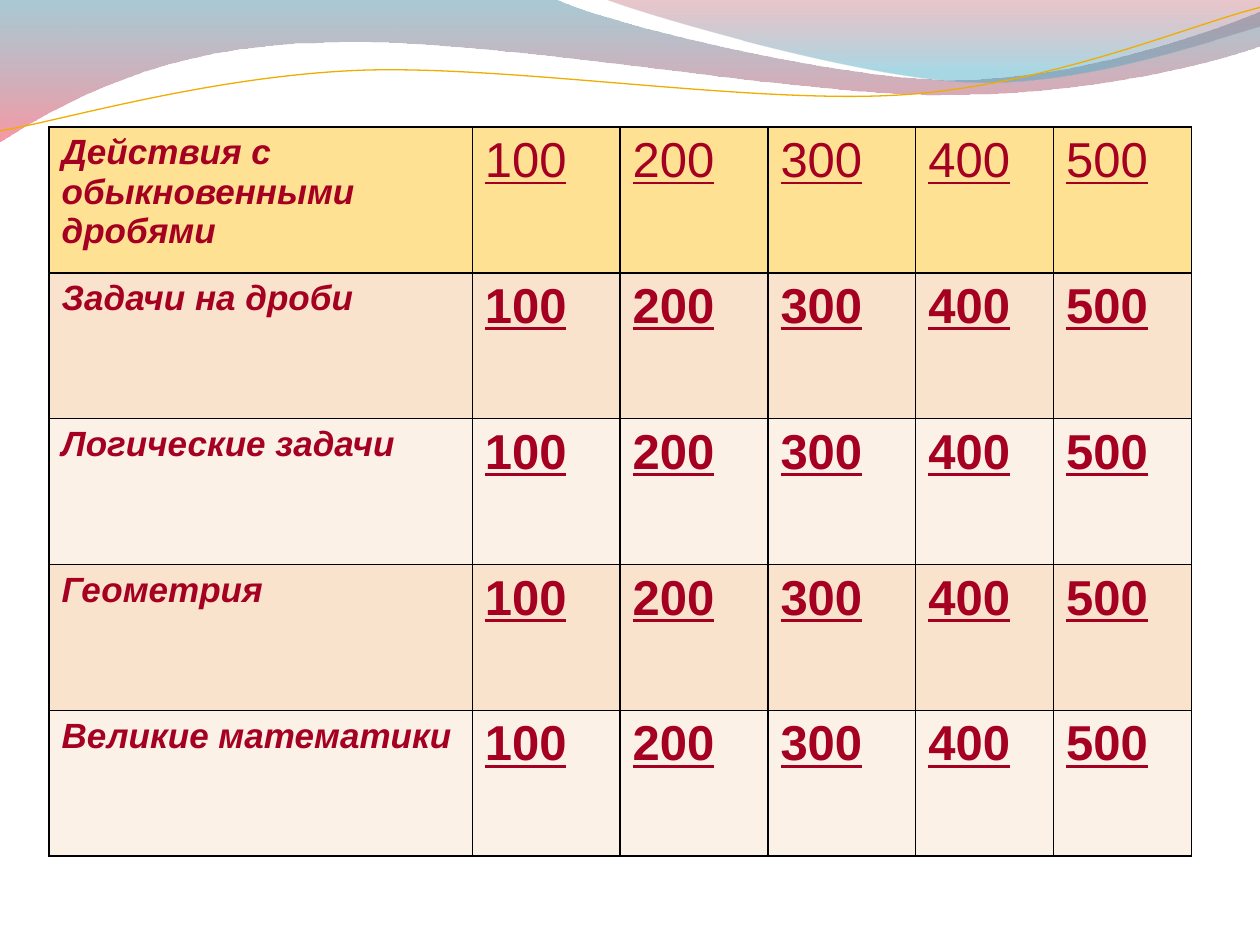
from dataclasses import dataclass

from lxml import etree
from pptx import Presentation
from pptx.dml.color import RGBColor
from pptx.oxml.ns import qn
from pptx.util import Cm, Pt


@dataclass(frozen=True)
class Theme:
    font: str = "Arial"
    ink: str = "A50021"
    grid: str = "000000"
    gold: str = "F0AD00"
    head: str = "FFE193"
    bands: tuple = ("F9E3CC", "FCF1E7")
    # position, colour, opacity in percent
    sea: tuple = ((0, "3F8A9F", 45), (100, "EF445B", 55))
    rose: tuple = ((0, "B84253", 30), (80, "42ABC7", 45))
    topic: int = 20
    score: int = 28
    hair: float = 0.75
    rule: float = 1


THEME = Theme()
rgb = RGBColor.from_string

TOPICS = ["Действия с обыкновенными дробями", "Задачи на дроби",
          "Логические задачи", "Геометрия", "Великие математики"]
SCORES = ["100", "200", "300", "400", "500"]
COLS = [8.53, 2.98, 2.98, 2.98, 2.78, 2.78]

# Each step is a line end (x, y) or a curve (x1, y1, x2, y2, x, y), in cm.
SWELL = [(0, -0.03), (11.18, -0.03), (12.09, 0.43, 16.87, 1.6, 19.25, 1.6),
         (21.67, 1.6, 24.33, 0.66, 25.4, 0.23), (25.43, 0.91),
         (24.97, 1.12, 22.1, 1.93, 18.95, 1.91),
         (15.8, 1.91, 9.7, 0.71, 6.53, 0.86),
         (3.28, 0.89, 1.17, 2.11, -0.03, 2.87)]
CREST = [(12.17, -0.03), (12.93, 0.28, 17.32, 1.57, 19.53, 1.65),
         (21.74, 1.75, 24.41, 0.81, 25.4, 0.53), (25.4, 0)]
THREAD = [(-0.04, 2.04), (1.16, 1.9, 4.18, 1.15, 7.2, 1.16),
          (10.25, 1.18, 15.13, 2.23, 18.18, 2.17),
          (21.21, 2.1, 23.93, 1.06, 25.45, 0.75)]
TILT = -2.7


def bend(shape, steps):
    """Join the three points of each curve step into one Bezier curve."""
    lines = iter(list(shape.element.spPr.iter(qn("a:lnTo"))))
    for step in steps[1:]:
        first = next(lines)
        if len(step) == 6:
            first.tag = qn("a:cubicBezTo")
            for _ in range(2):
                line = next(lines)
                first.append(line[0])
                line.getparent().remove(line)


def add_path(slide, box, steps, close):
    dots = [(Cm(step[i]), Cm(step[i + 1]))
            for step in steps for i in range(0, len(step), 2)]
    pen = slide.shapes.build_freeform(*dots[0], scale=1.0)
    pen.add_line_segments(dots[1:], close=close)
    shape = pen.convert_to_shape(Cm(box[0]), Cm(box[1]))
    bend(shape, steps)
    shape.shadow.inherit = False
    return shape


def add_wave(slide, box, steps, stops):
    shape = add_path(slide, box, steps, True)
    shape.line.fill.background()
    shape.fill.gradient()
    shape.fill.gradient_angle = 270
    for stop, (place, color, _) in zip(shape.fill.gradient_stops, stops):
        stop.position = place / 100
        stop.color.rgb = rgb(color)
    tints = shape.element.spPr.iter(qn("a:srgbClr"))
    for tint, (_, _, alpha) in zip(tints, stops):
        etree.SubElement(tint, qn("a:alpha")).set("val", str(alpha * 1000))


def add_header(slide, box):
    add_wave(slide, box, SWELL, THEME.sea)
    add_wave(slide, box, CREST, THEME.rose)
    thread = add_path(slide, box, THREAD, False)
    thread.rotation = TILT
    thread.fill.background()
    thread.line.color.rgb = rgb(THEME.gold)
    thread.line.width = Pt(THEME.hair)


def add_edges(cell):
    props = cell._tc.get_or_add_tcPr()
    for i, side in enumerate(("lnL", "lnR", "lnT", "lnB")):
        edge = etree.Element(qn("a:" + side), w=str(Pt(THEME.rule)))
        fill = etree.SubElement(edge, qn("a:solidFill"))
        etree.SubElement(fill, qn("a:srgbClr"), val=THEME.grid)
        props.insert(i, edge)


def fill_cell(cell, words, shade, topic, bold):
    cell.fill.solid()
    cell.fill.fore_color.rgb = rgb(shade)
    add_edges(cell)
    cell.text_frame.text = words
    font = cell.text_frame.paragraphs[0].runs[0].font
    font.name = THEME.font
    font.size = Pt(THEME.topic if topic else THEME.score)
    font.color.rgb = rgb(THEME.ink)
    font.bold = bold
    font.italic = topic
    font.underline = not topic


def add_board(slide, box):
    """Place the grid of topics and scores."""
    frame = slide.shapes.add_table(len(TOPICS), len(COLS), *map(Cm, box))
    table = frame.table
    for col, width in zip(table.columns, COLS):
        col.width = Cm(width)
    for r, topic in enumerate(TOPICS):
        table.rows[r].height = Cm(box[3] / len(TOPICS))
        shade = THEME.bands[(r - 1) % 2] if r else THEME.head
        for c, words in enumerate([topic] + SCORES):
            fill_cell(table.cell(r, c), words, shade, c == 0,
                      r > 0 or c == 0)


def main():
    deck = Presentation()
    deck.slide_width, deck.slide_height = Cm(25.4), Cm(19.05)
    slide = deck.slides.add_slide(deck.slide_layouts[6])
    add_header(slide, (0, 0))
    add_board(slide, (0.99, 2.56, sum(COLS), 14.7))
    deck.save("out.pptx")


if __name__ == "__main__":
    main()
